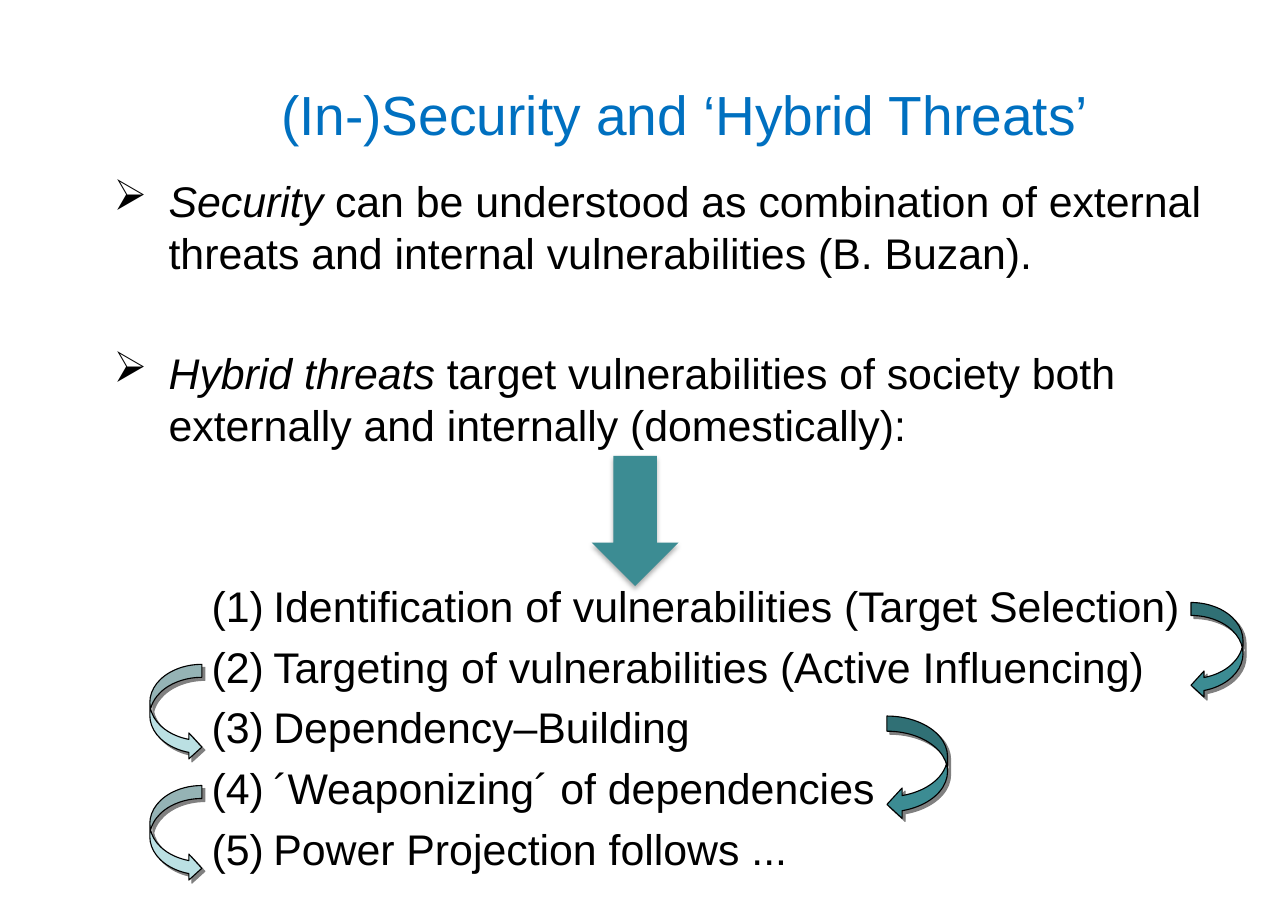
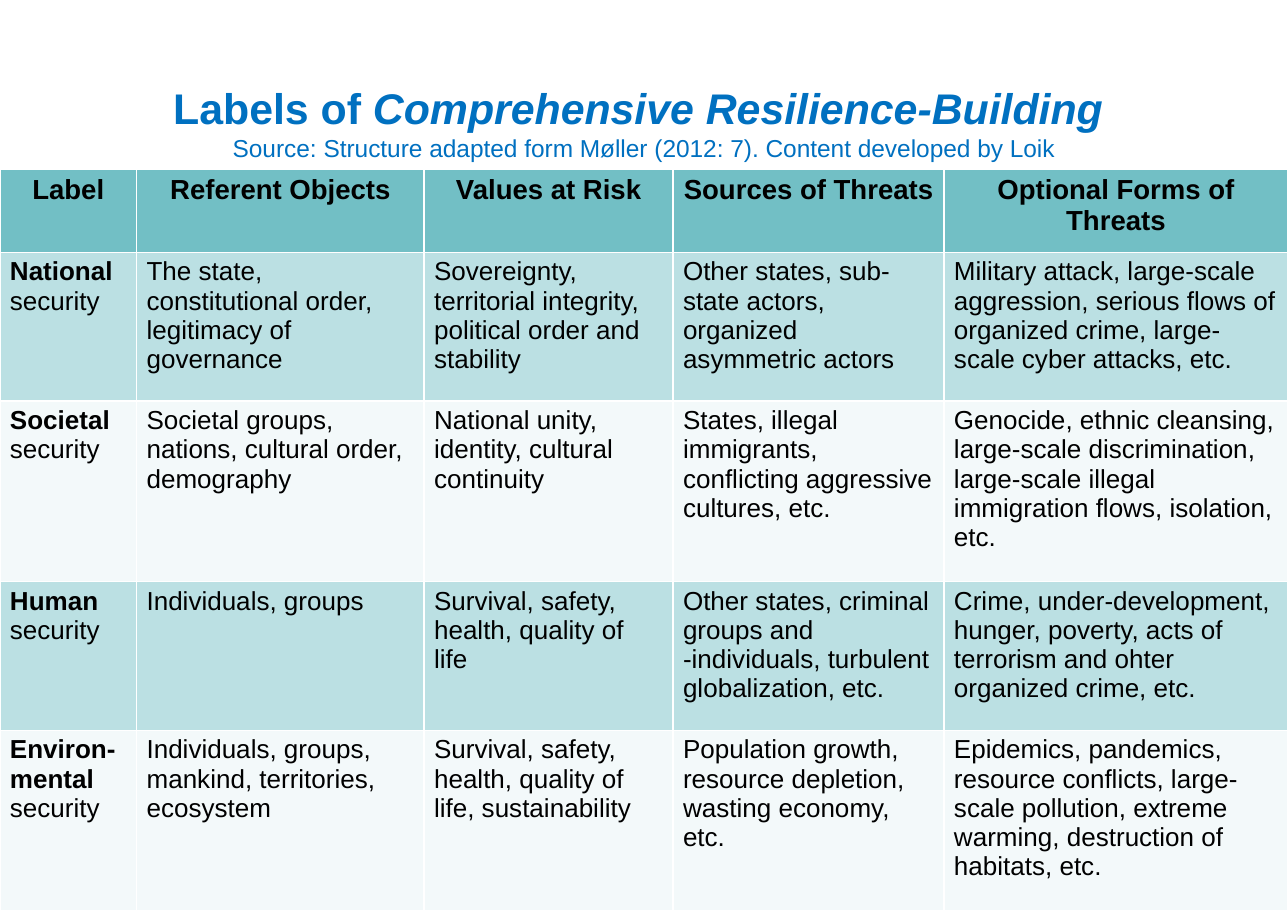
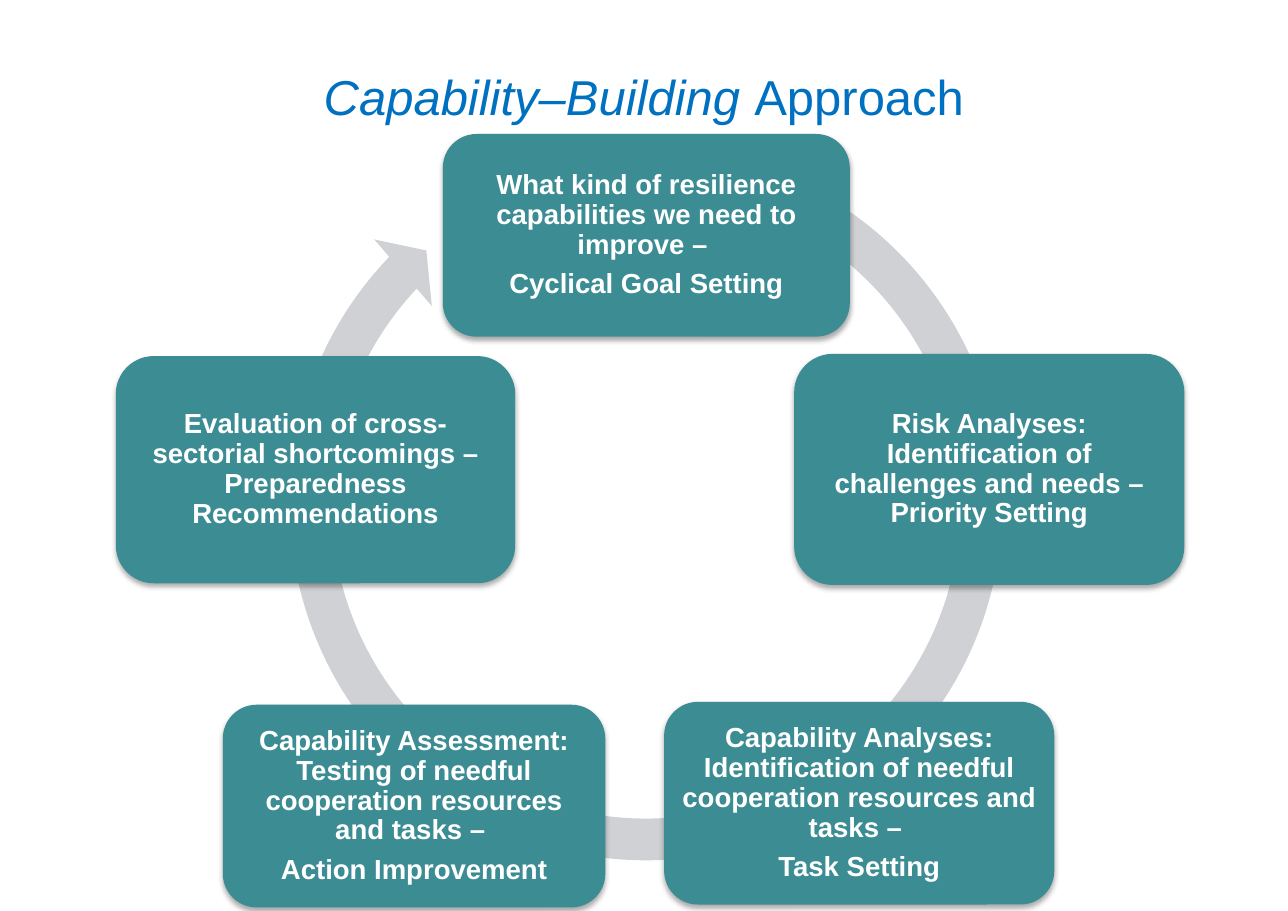
from lxml import etree
from pptx import Presentation
from pptx.dml.color import RGBColor
from pptx.enum.shapes import MSO_SHAPE
from pptx.enum.text import MSO_ANCHOR, PP_ALIGN
from pptx.oxml.ns import qn
from pptx.util import Pt

CENTER, LEFT = PP_ALIGN.CENTER, PP_ALIGN.LEFT
MIDDLE = MSO_ANCHOR.MIDDLE
ROUNDED, DOWN, CIRCULAR = MSO_SHAPE.ROUNDED_RECTANGLE, MSO_SHAPE.DOWN_ARROW, MSO_SHAPE.CIRCULAR_ARROW
HOOK_LEFT, HOOK_RIGHT = MSO_SHAPE.CURVED_LEFT_ARROW, MSO_SHAPE.CURVED_RIGHT_ARROW

BLUE = RGBColor(0x00, 0x70, 0xC0)
BLACK = RGBColor(0x00, 0x00, 0x00)
WHITE = RGBColor(0xFF, 0xFF, 0xFF)
TEAL = RGBColor(0x3C, 0x8C, 0x93)
HEADER = RGBColor(0x72, 0xBF, 0xC5)
AQUA = RGBColor(0xBB, 0xE0, 0xE3)
PALE = RGBColor(0xF3, 0xF9, 0xFA)
GREY = RGBColor(0xCF, 0xD1, 0xD4)

SOFT_SHADOW = ("000000", 32, 3.5, 2.2, 90)
HARD_SHADOW = ("808080", 100, 0, 2.8, 45)

WIDTH, HEIGHT = 841.7, 595.4


def add_run(paragraph, text, size, color, bold=False, italic=False):
    run = paragraph.add_run()
    run.text = text
    font = run.font
    font.name, font.size, font.bold, font.italic = "Arial", Pt(size), bold, italic
    font.color.rgb = color


def add_block(slide, kind, box, fill, shadow=None, outline=None):
    block = slide.shapes.add_shape(kind, *map(Pt, box))
    block.fill.solid()
    block.fill.fore_color.rgb = fill
    if outline is None:
        block.line.fill.background()
    else:
        block.line.color.rgb = outline
        block.line.width = Pt(0.75)
    block.shadow.inherit = False
    if shadow:
        color, alpha, blur, distance, angle = shadow
        effects = block._element.spPr.find(qn("a:effectLst"))
        outer = etree.SubElement(effects, qn("a:outerShdw"), blurRad=str(Pt(blur)), dist=str(Pt(distance)),
                                 dir=str(angle * 60000), algn="ctr", rotWithShape="0")
        tint = etree.SubElement(outer, qn("a:srgbClr"), val=color)
        etree.SubElement(tint, qn("a:alpha"), val=str(alpha * 1000))
    return block


prs = Presentation()
prs.slide_width, prs.slide_height = Pt(WIDTH), Pt(HEIGHT)

titles = [
    ((66.2, 42.5, 762.5, 63.4), [[("(In-)Security and ‘Hybrid Threats’", 36, False, False)]]),
    ((0, 48.2, WIDTH, 62.6), [
        [("Labels of ", 28, True, False), ("Comprehensive Resilience-Building ", 28, True, True)],
        [("Source: Structure adapted form Møller (2012: 7). Content developed by Loik", 16, False, False)],
    ]),
    ((0, 31, WIDTH, 63.4), [[("Capability–Building ", 32, False, True), ("Approach", 32, False, False)]]),
]
slides = []
for box, lines in titles:
    slide = prs.slides.add_slide(prs.slide_layouts[6])
    slides.append(slide)
    frame = slide.shapes.add_textbox(*map(Pt, box)).text_frame
    frame.word_wrap = True
    frame.vertical_anchor = MIDDLE
    heading = frame.paragraphs[0]
    heading.alignment = CENTER
    for number, line in enumerate(lines):
        if number:
            heading.add_line_break()
        for text, size, bold, italic in line:
            add_run(heading, text, size, BLUE, bold, italic)
threats, labels, approach = slides

BULLET = (36, -36, "a:buChar", {"char": "➢"})
STEP = (104.4, -40.3, "a:buAutoNum", {"type": "arabicParenBoth"})
statements = [
    (BULLET, 0, "Security", " can be understood as combination of external threats and internal vulnerabilities (B. Buzan)."),
    (BULLET, 45, "Hybrid threats ", "target vulnerabilities of society both externally and internally (domestically):"),
    (STEP, 85, "", "Identification of vulnerabilities (Target Selection)"),
    (STEP, 6, "", "Targeting of vulnerabilities (Active Influencing)"),
    (STEP, 6, "", "Dependency–Building"),
    (STEP, 6, "", "´Weaponizing´ of dependencies"),
    (STEP, 6, "", "Power Projection follows ..."),
]
body = threats.shapes.add_textbox(Pt(66.2), Pt(110.9), Pt(762.5), Pt(476)).text_frame
body.word_wrap = True
body.margin_left = body.margin_right = Pt(8)
for number, ((margin, indent, marker, options), gap, term, text) in enumerate(statements):
    paragraph = body.add_paragraph() if number else body.paragraphs[0]
    properties = paragraph._p.get_or_add_pPr()
    properties.set("marL", str(Pt(margin)))
    properties.set("indent", str(Pt(indent)))
    etree.SubElement(properties, qn(marker), **options)
    if gap:
        paragraph.space_before = Pt(gap)
    if term:
        add_run(paragraph, term, 28, BLACK, italic=True)
    add_run(paragraph, text, 28, BLACK)

for kind, box, fill in [
    (HOOK_LEFT, (778.3, 393.8, 34, 62.6), TEAL),
    (HOOK_RIGHT, (97.9, 434.2, 34, 62.6), AQUA),
    (HOOK_LEFT, (579.6, 468, 39.6, 67.7), TEAL),
    (HOOK_RIGHT, (97.9, 513.4, 34, 62.6), AQUA),
]:
    add_block(threats, kind, box, fill, HARD_SHADOW, BLACK)
add_block(threats, DOWN, (386.6, 298, 56.9, 85), TEAL, SOFT_SHADOW)

rows = [
    ["Label", "Referent Objects", "Values at Risk", "Sources of Threats", "Optional Forms of Threats"],
    ["National", "The state, constitutional order, legitimacy of governance",
     "Sovereignty, territorial integrity, political order and stability",
     "Other states, sub-state actors, organized asymmetric actors",
     "Military attack, large-scale aggression, serious flows of organized crime, large-scale cyber attacks, etc."],
    ["Societal", "Societal groups, nations, cultural order,\ndemography",
     "National unity, identity, cultural continuity",
     "States, illegal immigrants, conflicting aggressive cultures, etc.",
     "Genocide, ethnic cleansing, large-scale discrimination, large-scale illegal immigration flows, isolation, etc."],
    ["Human", "Individuals, groups", "Survival, safety, health, quality of life",
     "Other states, criminal groups and -individuals, turbulent globalization, etc.",
     "Crime, under-development, hunger, poverty, acts of terrorism and ohter organized crime, etc."],
    ["Environ-mental", "Individuals, groups, mankind, territories, ecosystem",
     "Survival, safety, health, quality of life, sustainability",
     "Population growth, resource depletion, wasting economy, etc.",
     "Epidemics, pandemics, resource conflicts, large-scale pollution, extreme warming, destruction of habitats, etc."],
]
matrix = labels.shapes.add_table(5, 5, Pt(0), Pt(110.9), Pt(WIDTH), Pt(484.5)).table
for column, width in zip(matrix.columns, (89.3, 187.9, 162.7, 177.1, 224.7)):
    column.width = Pt(width)
for row, height in zip(matrix.rows, (54, 97.2, 118, 97.2, 118)):
    row.height = Pt(height)
for r, texts in enumerate(rows):
    for c, text in enumerate(texts):
        cell = matrix.cell(r, c)
        cell.fill.solid()
        cell.fill.fore_color.rgb = HEADER if r == 0 else AQUA if r % 2 else PALE
        cell.margin_left = cell.margin_right = Pt(6.5)
        cell.margin_top = cell.margin_bottom = Pt(3.25)
        frame = cell.text_frame
        for number, line in enumerate(text.split("\n")):
            paragraph = frame.add_paragraph() if number else frame.paragraphs[0]
            paragraph.alignment = LEFT if r else CENTER
            add_run(paragraph, line, 17 if r else 18, BLACK, bold=r == 0 or c == 0)
        if r and c == 0:
            add_run(paragraph, " security", 17, BLACK)

cycle = add_block(approach, CIRCULAR, (174.2, 81.4, 496, 496), GREY)
for number, value in enumerate((0.055, 3.307, 134.151, 176.097, 0.058)):
    cycle.adjustments[number] = value
stages = [
    ((289.4, 87.6, 266, 132.5), ["What kind of resilience capabilities we need to improve – ", "Cyclical Goal Setting"]),
    ((519, 231.3, 255, 151), ["Risk Analyses: Identification of challenges and needs – Priority Setting"]),
    ((434, 458.7, 255, 132.5),
     ["Capability Analyses: Identification of needful cooperation resources and tasks – ", "Task Setting"]),
    ((145.6, 460.6, 250, 132.5),
     ["Capability Assessment: Testing of needful cooperation resources and tasks – ", "Action Improvement"]),
    ((75.7, 232.7, 261, 148.5), ["Evaluation of cross-sectorial shortcomings – Preparedness Recommendations"]),
]
for box, lines in stages:
    frame = add_block(approach, ROUNDED, box, TEAL, SOFT_SHADOW).text_frame
    frame.word_wrap = True
    frame.vertical_anchor = MIDDLE
    frame.margin_left = frame.margin_right = frame.margin_top = frame.margin_bottom = Pt(5)
    for number, line in enumerate(lines):
        paragraph = frame.add_paragraph() if number else frame.paragraphs[0]
        paragraph.alignment = CENTER
        paragraph.line_spacing = 0.9
        if number:
            paragraph.space_before = Pt(6.3)
        add_run(paragraph, line, 18, WHITE, bold=True)

prs.save("out.pptx")
